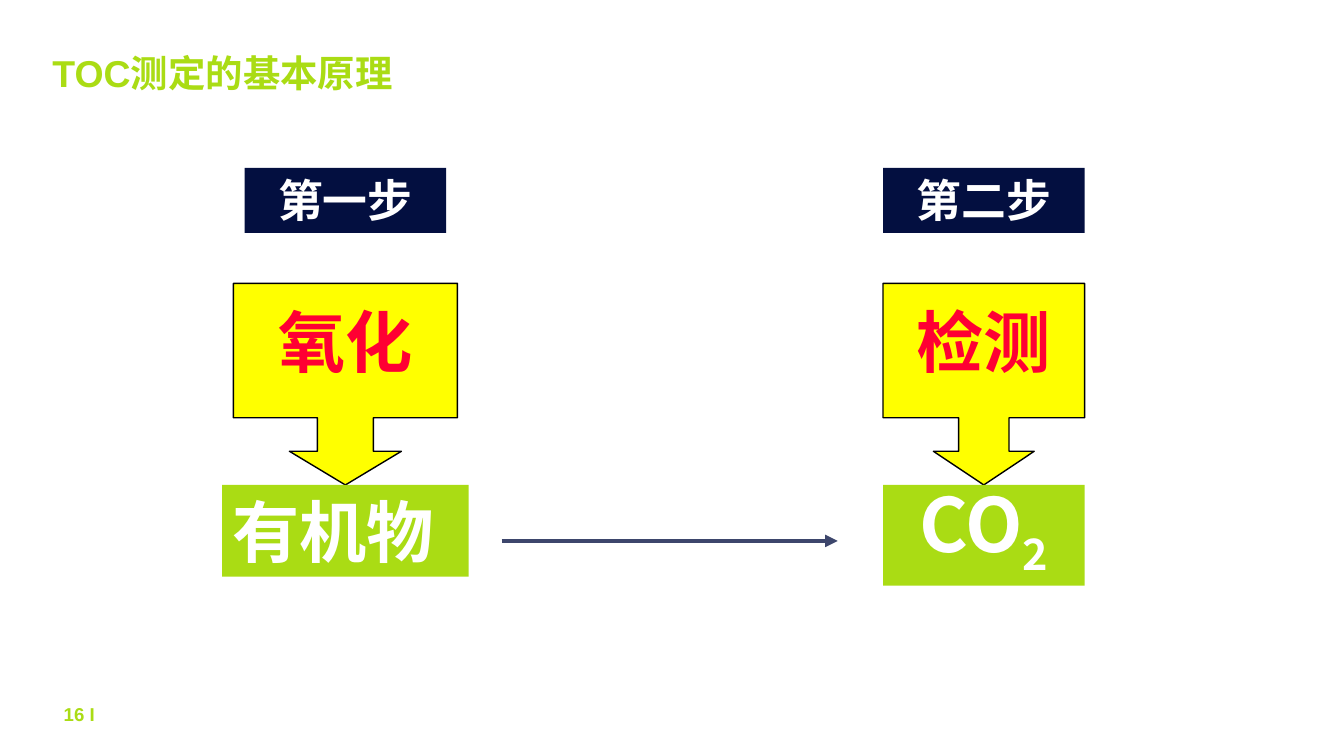
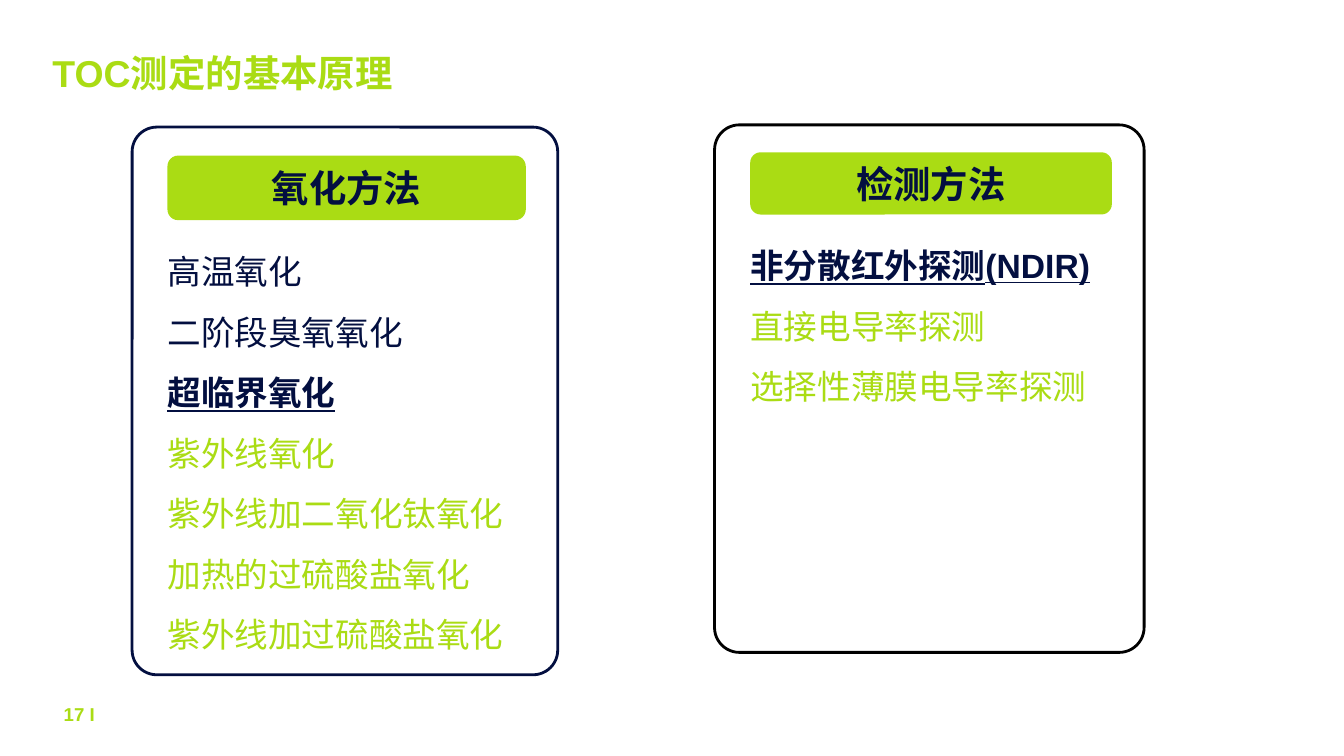
from lxml import etree
from pptx import Presentation
from pptx.dml.color import RGBColor
from pptx.enum.shapes import MSO_CONNECTOR, MSO_SHAPE
from pptx.enum.text import MSO_ANCHOR, PP_ALIGN
from pptx.oxml.ns import qn
from pptx.util import Inches, Pt

LIME = RGBColor(0xAA, 0xDC, 0x14)
NAVY = RGBColor(0x03, 0x0F, 0x40)
SLATE = RGBColor(0x3D, 0x46, 0x6C)
YELLOW = RGBColor(0xFF, 0xFF, 0x00)
RED = RGBColor(0xFF, 0x00, 0x33)
WHITE = RGBColor(0xFF, 0xFF, 0xFF)
BLACK = RGBColor(0x00, 0x00, 0x00)

LEFT, CENTER, RIGHT = PP_ALIGN.LEFT, PP_ALIGN.CENTER, PP_ALIGN.RIGHT
TOP, MIDDLE = MSO_ANCHOR.TOP, MSO_ANCHOR.MIDDLE
RECTANGLE, ROUNDED = MSO_SHAPE.RECTANGLE, MSO_SHAPE.ROUNDED_RECTANGLE
CALLOUT = MSO_SHAPE.DOWN_ARROW_CALLOUT
STRAIGHT = MSO_CONNECTOR.STRAIGHT

LATIN, HAN = "Arial", "Noto Sans CJK SC"
COLUMNS, ROWS = 120, 67.5
LINE_HEIGHT = 1.2
NO_MARGINS = (0, 0, 0, 0)
BOX_MARGINS = (0.1, 0.05, 0.1, 0.05)

TITLE = "TOC测定的基本原理"
TITLE_FORMAT = {"size": Pt(26.7), "name": LATIN, "bold": True, "color": LIME}
FOOTER_FORMAT = {**TITLE_FORMAT, "size": Pt(13.3)}
HEADING_FORMAT = {**TITLE_FORMAT, "color": NAVY}
STEP_FORMAT = {"size": Pt(32), "name": HAN, "bold": True, "color": WHITE}
ACTION_FORMAT = {**STEP_FORMAT, "size": Pt(48), "color": RED}
MATTER_FORMAT = {**STEP_FORMAT, "size": Pt(48)}
GAS_FORMAT = {**STEP_FORMAT, "size": Pt(53.3)}
PLAIN = {"size": Pt(24), "name": LATIN, "color": NAVY}
CHOSEN = {**PLAIN, "bold": True, "underline": True}
OTHER = {**PLAIN, "color": LIME}

FIRST_CENTER, SECOND_CENTER = 30.84, 87.84
STEP_WIDTH = 18

OXIDATION = [
    ("高温氧化", PLAIN),
    ("二阶段臭氧氧化", PLAIN),
    ("超临界氧化", CHOSEN),
    ("紫外线氧化", OTHER),
    ("紫外线加二氧化钛氧化", OTHER),
    ("加热的过硫酸盐氧化", OTHER),
    ("紫外线加过硫酸盐氧化", OTHER),
]
DETECTION = [
    ("非分散红外探测(NDIR)", CHOSEN),
    ("直接电导率探测", OTHER),
    ("选择性薄膜电导率探测", OTHER),
]


def grid(*cells):
    return [Inches(cell * 13.33 / COLUMNS) for cell in cells]


def add_span(para, text, form):
    span = para.add_run()
    span.text = text
    for key, value in form.items():
        if key == "color":
            span.font.color.rgb = value
        else:
            setattr(span.font, key, value)
    east_asian = etree.SubElement(span._r.get_or_add_rPr(), qn("a:ea"))
    east_asian.set("typeface", HAN)
    return span


def write(box, lines, align=LEFT, anchor=TOP, margins=NO_MARGINS, spacing=1):
    frame = box.text_frame
    frame.word_wrap = True
    frame.vertical_anchor = anchor
    for side, margin in zip(("left", "top", "right", "bottom"), margins):
        setattr(frame, f"margin_{side}", Inches(margin))
    for index, (text, form) in enumerate(lines):
        para = frame.add_paragraph() if index else frame.paragraphs[0]
        para.alignment = align
        para.line_spacing = Pt(round(form["size"].pt * LINE_HEIGHT * spacing, 1))
        add_span(para, text, form)
    return frame


def add_text(page, place, lines, **layout):
    return write(page.shapes.add_textbox(*grid(*place)), lines, **layout)


def add_block(page, kind, place, fill, line=None, weight=1):
    box = page.shapes.add_shape(kind, *grid(*place))
    box.shadow.inherit = False
    box.fill.solid()
    box.fill.fore_color.rgb = fill
    if line is None:
        box.line.fill.background()
    else:
        box.line.color.rgb = line
        box.line.width = Pt(weight)
    return box


def add_label(page, center, top, width, height, fill, text, form, align=CENTER):
    box = add_block(page, RECTANGLE, (center - width / 2, top, width, height), fill)
    return write(box, [(text, form)], align=align, margins=BOX_MARGINS)


def add_callout(page, center, width, text):
    place = (center - width / 2, 25.3, width, 18)
    box = add_block(page, CALLOUT, place, YELLOW, BLACK)
    shaft = 0.25 * width / STEP_WIDTH
    for index, value in enumerate((shaft, shaft, 0.167, 0.667)):
        box.adjustments[index] = value
    write(box, [(text, ACTION_FORMAT)], align=CENTER, margins=(0.1, 0.17, 0.1, 0))


def add_arrow(page, start, end, row):
    arrow = page.shapes.add_connector(STRAIGHT, *grid(start, row, end, row))
    arrow.line.color.rgb = SLATE
    arrow.line.width = Pt(3)
    etree.SubElement(arrow.line._get_or_add_ln(), qn("a:tailEnd")).set("type", "triangle")
    etree.SubElement(arrow._element.spPr, qn("a:effectLst"))


def add_panel(page, place, outline, heading, methods):
    left, top, width, height = place
    panel = add_block(page, ROUNDED, place, WHITE, outline, 2)
    panel.adjustments[0] = 0.058
    inner_left, inner_width = left + 0.083 * width, 0.842 * width
    header = add_block(
        page, ROUNDED, (inner_left, top + 0.052 * height, inner_width, 0.118 * height), LIME
    )
    write(header, [(heading, HEADING_FORMAT)], align=CENTER, anchor=MIDDLE)
    list_place = (inner_left, top + 0.19 * height, inner_width, 5.4 * len(methods))
    add_text(page, list_place, methods, spacing=1.5)


def add_page(deck, number):
    page = deck.slides.add_slide(deck.slide_layouts[6])
    add_text(page, (4.68, 4.5, 104, 12.3), [(TITLE, TITLE_FORMAT)])
    add_text(
        page, (0, 62.8, 9, 4.6), [(f"{number} I", FOOTER_FORMAT)],
        align=RIGHT, margins=(0, 0, 0.06, 0),
    )
    return page


def add_steps_page(deck):
    page = add_page(deck, 16)
    for center, step, width, action in (
        (FIRST_CENTER, "第一步", 20, "氧化"),
        (SECOND_CENTER, "第二步", STEP_WIDTH, "检测"),
    ):
        add_label(page, center, 15, STEP_WIDTH, 5.8, NAVY, step, STEP_FORMAT)
        add_callout(page, center, width, action)
    add_label(page, FIRST_CENTER, 43.3, 22, 8.2, LIME, "有机物", MATTER_FORMAT, LEFT)
    gas = add_label(page, SECOND_CENTER, 43.3, STEP_WIDTH, 9, LIME, "CO", GAS_FORMAT)
    subscript = add_span(gas.paragraphs[0], "2", GAS_FORMAT)
    subscript._r.get_or_add_rPr().set("baseline", "-25000")
    add_arrow(page, 44.8, 74.8, 48.3)


def add_methods_page(deck):
    page = add_page(deck, 17)
    add_panel(page, (11.8, 11.35, 38, 48.9), NAVY, "氧化方法", OXIDATION)
    add_panel(page, (63.8, 11.15, 38.35, 47.1), BLACK, "检测方法", DETECTION)


def main():
    deck = Presentation()
    deck.slide_width, deck.slide_height = grid(COLUMNS, ROWS)
    add_steps_page(deck)
    add_methods_page(deck)
    deck.save("out.pptx")


if __name__ == "__main__":
    main()
